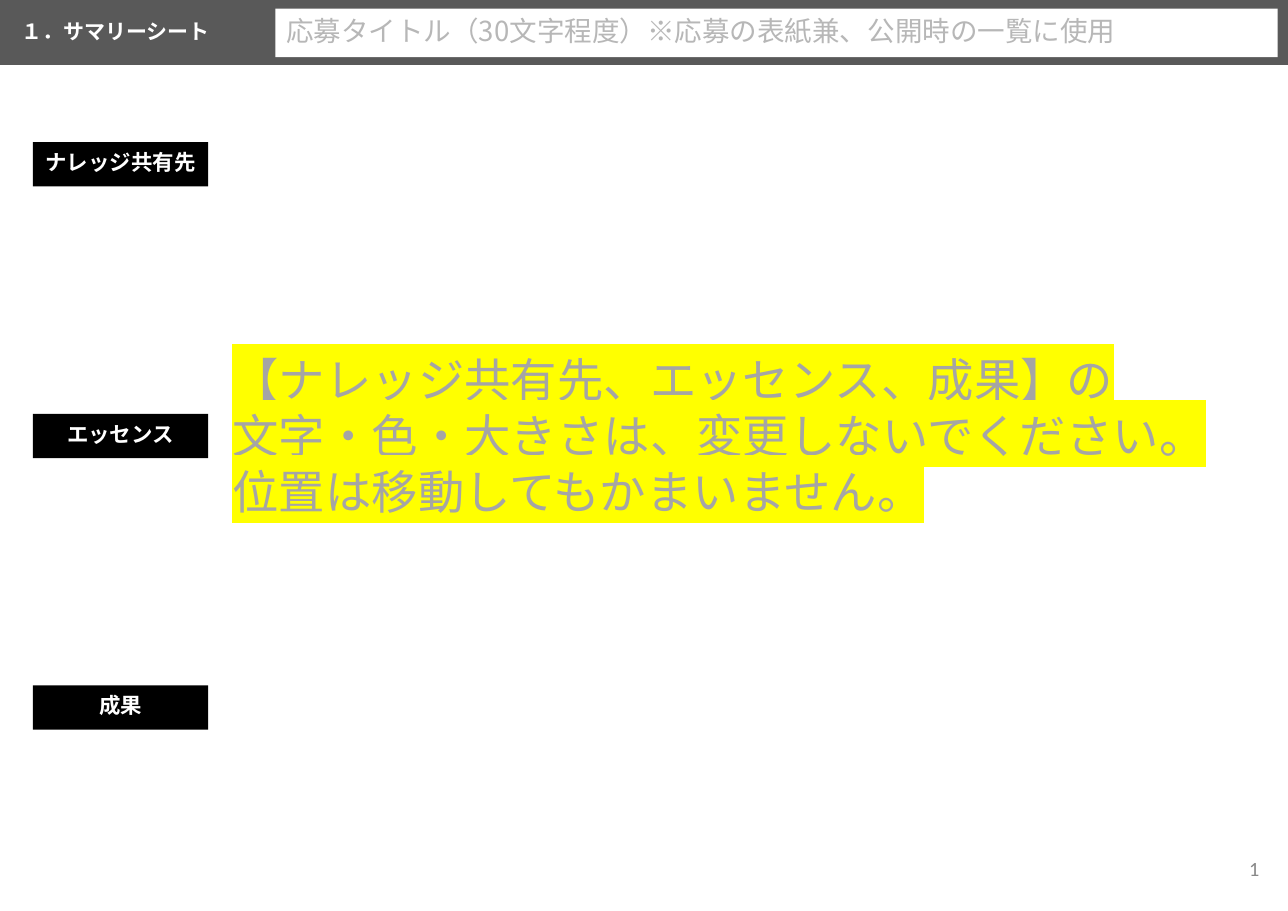
from dataclasses import dataclass

from lxml.etree import SubElement
from pptx import Presentation
from pptx.dml.color import RGBColor
from pptx.enum.shapes import MSO_SHAPE as Shape
from pptx.enum.text import MSO_ANCHOR as Anchor, PP_ALIGN as Align
from pptx.oxml.ns import qn
from pptx.util import Cm, Pt

HEADING = "１．サマリーシート"
TITLE_HINT = "応募タイトル（30文字程度）※応募の表紙兼、公開時の一覧に使用"
SECTIONS = ["ナレッジ共有先", "エッセンス", "成果"]
NOTICE = [
    "【ナレッジ共有先、エッセンス、成果】の",
    "文字・色・大きさは、変更しないでください。",
    "位置は移動してもかまいません。",
]
PAGE_NUMBER = "1"


@dataclass(frozen=True)
class Theme:
    font: str = "Noto Sans CJK JP"
    number_font: str = "Calibri"
    white: str = "FFFFFF"
    black: str = "000000"
    band: str = "595959"
    hint: str = "B7B7B7"
    notice: str = "A5A5A5"
    highlight: str = "FFFF00"
    number: str = "888888"
    heading_size: float = 13.7
    hint_size: float = 18
    notice_size: float = 30.3
    section_size: float = 14
    number_size: float = 13.2


THEME = Theme()
SLIDE_WIDTH, SLIDE_HEIGHT = 29.7, 21.0
BAND_HEIGHT = 1.5
FIELD_TOP, FIELD_HEIGHT = 0.2, 1.12
SECTION_LEFT, SECTION_TOP, SECTION_PITCH = 0.76, 3.28, 6.26
SECTION_WIDTH, SECTION_HEIGHT = 4.04, 1.02


def add_box(slide, left, top, width, height, fill=None):
    bounds = [Cm(value) for value in (left, top, width, height)]
    if fill is None:
        return slide.shapes.add_textbox(*bounds)
    shape = slide.shapes.add_shape(Shape.RECTANGLE, *bounds)
    shape.shadow.inherit = False
    shape.fill.solid()
    shape.fill.fore_color.rgb = RGBColor.from_string(fill)
    shape.line.fill.background()
    return shape


def write(shape, lines, size, color, font=THEME.font, bold=False, align=Align.LEFT,
          spacing=1.0, anchor=Anchor.MIDDLE, margins=(0.25, 0.13), highlight=None):
    frame = shape.text_frame
    frame.text = "\n".join(lines)
    frame.word_wrap = True
    frame.vertical_anchor = anchor
    frame.margin_left = frame.margin_right = Cm(margins[0])
    frame.margin_top = frame.margin_bottom = Cm(margins[1])
    for paragraph in frame.paragraphs:
        paragraph.alignment = align
        paragraph.line_spacing = spacing
        for run in paragraph.runs:
            run.font.size = Pt(size)
            run.font.bold = bold
            run.font.color.rgb = RGBColor.from_string(color)
            properties = run.font._element
            if highlight:
                marker = SubElement(properties, qn("a:highlight"))
                SubElement(marker, qn("a:srgbClr"), val=highlight)
            run.font.name = font
            SubElement(properties, qn("a:ea"), typeface=font)


def build_slide(slide):
    number = add_box(slide, 28.07, 19.46, 1.22, 1.12)
    write(number, [PAGE_NUMBER], THEME.number_size, THEME.number,
          font=THEME.number_font, align=Align.RIGHT)

    add_box(slide, 0, 0, SLIDE_WIDTH, BAND_HEIGHT, THEME.band)
    heading = add_box(slide, 0.25, FIELD_TOP, 28.85, FIELD_HEIGHT)
    write(heading, [HEADING], THEME.heading_size, THEME.white, bold=True, spacing=0.9)
    title = add_box(slide, 6.35, FIELD_TOP, 23.11, FIELD_HEIGHT, THEME.white)
    write(title, [TITLE_HINT], THEME.hint_size, THEME.hint, spacing=0.9)

    notice = add_box(slide, 5.36, 8.1, 24.36, 3.89)
    write(notice, NOTICE, THEME.notice_size, THEME.notice, spacing=Pt(36.4),
          anchor=Anchor.TOP, margins=(0, 0), highlight=THEME.highlight)

    for index, name in enumerate(SECTIONS):
        label = add_box(slide, SECTION_LEFT, SECTION_TOP + index * SECTION_PITCH,
                        SECTION_WIDTH, SECTION_HEIGHT, THEME.black)
        write(label, [name], THEME.section_size, THEME.white, bold=True,
              align=Align.CENTER, spacing=0.8, margins=(0.25, 0.25))


def main():
    presentation = Presentation()
    presentation.slide_width = Cm(SLIDE_WIDTH)
    presentation.slide_height = Cm(SLIDE_HEIGHT)
    build_slide(presentation.slides.add_slide(presentation.slide_layouts[6]))
    presentation.save("out.pptx")


if __name__ == "__main__":
    main()
